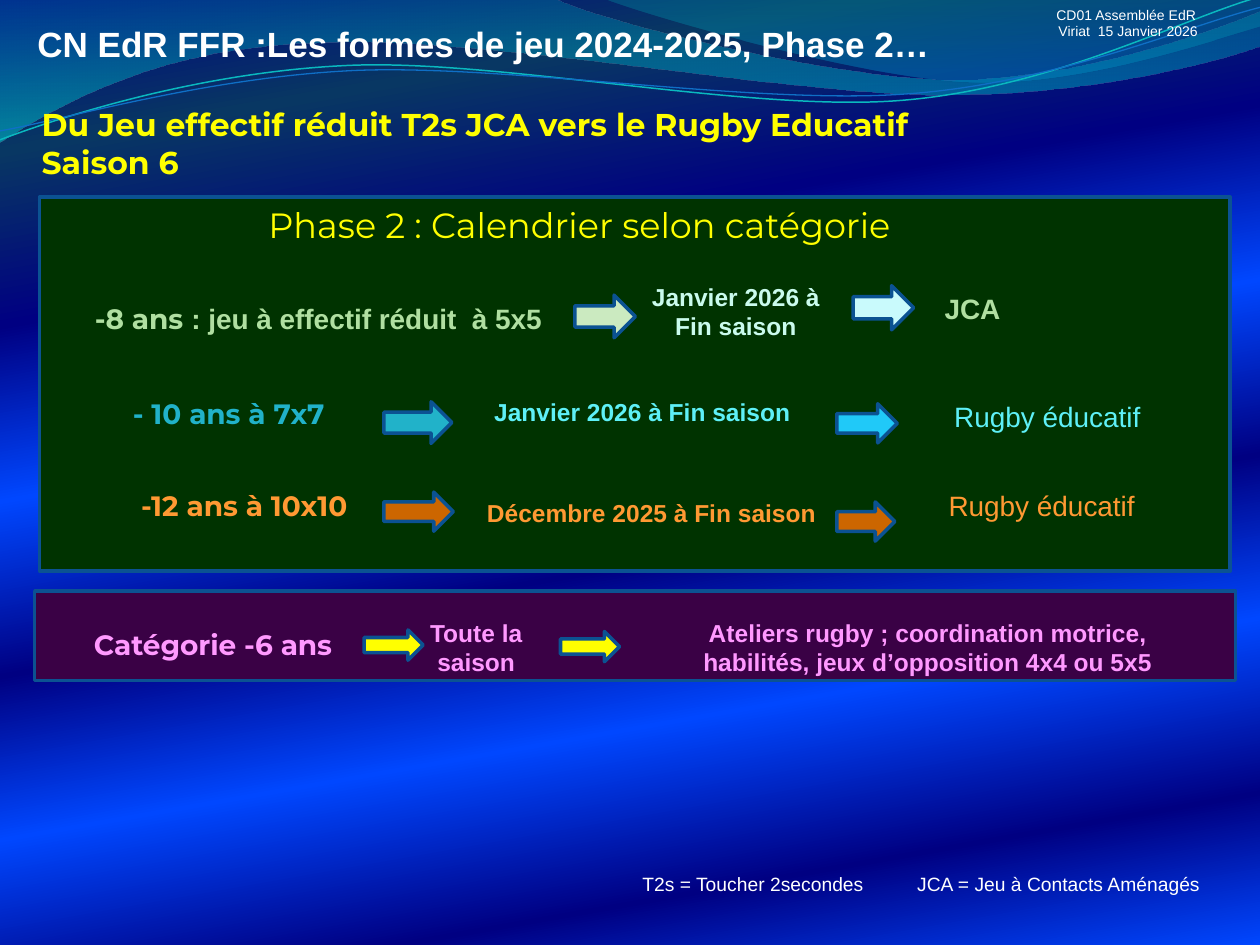
import math

import pptx
import pptx.dml.color
import pptx.enum.shapes
import pptx.enum.text
import pptx.oxml
import pptx.oxml.ns
import pptx.util

Cm = pptx.util.Cm
Pt = pptx.util.Pt
qn = pptx.oxml.ns.qn
NS = pptx.oxml.ns.nsdecls("a")
SHAPE = pptx.enum.shapes.MSO_SHAPE
ALIGN = pptx.enum.text.PP_ALIGN
LEFT, CENTER = ALIGN.LEFT, ALIGN.CENTER

COLORS = {
    "white": "FFFFFF", "yellow": "FFFF00", "border": "0B5292",
    "green panel": "003300", "purple panel": "3A0145", "pink": "FF99FF",
    "sage": "B0DFA1", "pale sage": "CBEAC0", "mint": "CAFBED", "ice": "C9FAFC",
    "teal": "21B2C9", "aqua": "5EF0F7", "sky": "20C9F8",
    "orange": "FF9933", "rust": "CC6600",
    "wave cyan": "0AB8BF", "wave blue": "0F6FC6",
}

# Gradient stops: position, colour, opacity in percent
BACKGROUND = [(0, "000082", 100), (13, "083763", 100), (28, "000082", 100),
              (43, "0047FF", 100), (58, "000082", 100), (72, "0047FF", 100),
              (87, "000082", 100), (100, "0047FF", 100)]

# Waves in cm: the first point, then lines (2 numbers) or Bezier curves (6)
WAVE_BANDS = [
    ([(0, -0.03), (11.18, -0.03), (12.09, 0.43, 16.87, 1.6, 19.25, 1.6),
      (21.67, 1.6, 24.33, 0.66, 25.4, 0.23), (25.43, 0.91),
      (24.97, 1.12, 22.1, 1.93, 18.95, 1.91),
      (15.8, 1.91, 9.7, 0.71, 6.53, 0.86),
      (3.28, 0.89, 1.17, 2.11, -0.03, 2.87)],
     [(0, "0074A1", 45), (100, "00C6CF", 55)]),
    ([(12.17, -0.03), (12.93, 0.28, 17.32, 1.57, 19.53, 1.65),
      (21.74, 1.75, 24.41, 0.81, 25.4, 0.53), (25.4, 0)],
     [(0, "00A1A9", 30), (80, "008BBF", 45)]),
]
WAVE_LINES = [
    ([(0, 2.82), (1.22, 2.36, 4.01, 1.45, 7.04, 1.32),
      (10.03, 1.19, 15.06, 2.26, 18.11, 2.03),
      (21.16, 1.8, 23.83, 0.38, 25.35, -0.05)], "wave cyan", 0.85),
    ([(0, 2.64), (1.19, 2.44, 4.17, 1.55, 7.19, 1.42),
      (10.24, 1.3, 15.16, 2.11, 18.21, 1.9),
      (21.23, 1.7, 23.9, 0.53, 25.4, 0.15)], "wave blue", 0.75),
]
WAVE_TILT = -2.7

# Calendar rows: texts (box, lines, font, size, colour, bold), arrows (box, colour)
ROW_6 = (
    [((1.5, 12.52, 5.59, 0.94), ["Catégorie -6 ans"], "Montserrat", 16, "pink", True),
     ((8.1, 12.33, 3, 1.45), ["Toute la saison"], "Arial", 14, "pink", True),
     ((12.9, 12.33, 11.61, 1.45),
      ["Ateliers rugby ; coordination motrice, habilités, jeux d’opposition 4x4 ou 5x5"],
      "Arial", 14, "pink", True)],
    [((7.34, 12.7, 1.19, 0.61), "yellow"), ((11.3, 12.73, 1.19, 0.61), "yellow")])
ROW_8 = (
    [((1.19, 5.96, 10.62, 0.94), [[("-8 ans ", "Montserrat"),
                                   (": jeu à effectif réduit  à 5x5 ", "Arial")]],
      "Arial", 16, "sage", True),
     ((12.79, 5.56, 4.09, 1.45), ["Janvier 2026 à", "Fin saison"], "Arial", 14, "mint", True),
     ((17.79, 5.75, 3.63, 0.94), ["JCA"], "Arial", 16, "sage", True)],
    [((11.59, 5.95, 1.22, 0.86), "pale sage"), ((17.2, 5.76, 1.22, 0.89), "ice")])
ROW_10 = (
    [((1.02, 7.87, 7.34, 0.94), ["- 10 ans à 7x7 "], "Montserrat", 16, "teal", True),
     ((9.18, 7.87, 7.54, 0.86), ["Janvier 2026 à Fin saison"], "Arial", 14, "aqua", True),
     ((18.46, 7.92, 5.31, 0.94), ["Rugby éducatif"], "Arial", 16, "aqua", False)],
    [((7.74, 8.1, 1.37, 0.84), "teal"), ((16.87, 8.14, 1.22, 0.79), "sky")])
ROW_12 = (
    [((1.4, 9.73, 7.21, 0.94), ["-12 ans à 10x10 "], "Montserrat", 16, "orange", True),
     ((9.53, 9.92, 7.21, 0.86), ["Décembre 2025 à Fin saison"], "Arial", 14, "orange", True),
     ((18.46, 9.73, 5.08, 0.94), ["Rugby éducatif"], "Arial", 16, "orange", False)],
    [((7.74, 9.92, 1.4, 0.79), "rust"), ((16.87, 10.12, 1.17, 0.79), "rust")])


def rgb(name):
    return pptx.dml.color.RGBColor.from_string(COLORS[name])


def set_attrs(obj, values):
    for name, value in values.items():
        setattr(obj, name, value)


def set_gradient(fill, element, stops, angle):
    fill.gradient()
    old = next(element.iter(qn("a:gradFill")))
    gs = "".join(f'<a:gs pos="{pos * 1000}"><a:srgbClr val="{color}">'
                 f'<a:alpha val="{alpha * 1000}"/></a:srgbClr></a:gs>'
                 for pos, color, alpha in stops)
    new = pptx.oxml.parse_xml(
        f'<a:gradFill {NS} rotWithShape="1"><a:gsLst>{gs}</a:gsLst>'
        f'<a:lin ang="{angle * 60000}" scaled="0"/></a:gradFill>')
    old.getparent().replace(old, new)


def turn(x, y, degrees, cx=12.7, cy=1.46):
    cos, sin = math.cos(math.radians(degrees)), math.sin(math.radians(degrees))
    return (cx + (x - cx) * cos - (y - cy) * sin,
            cy + (x - cx) * sin + (y - cy) * cos)


def add_outline(shapes, segments, close, tilt=0):
    points = [turn(*seg[i:i + 2], -tilt) for seg in segments for i in range(0, len(seg), 2)]
    emu = [(Cm(x), Cm(y)) for x, y in points]
    fb = shapes.build_freeform(*emu[0])
    fb.add_line_segments(emu[1:], close=close)
    sp = fb.convert_to_shape()
    set_attrs(sp, {"rotation": tilt})
    sp.shadow.inherit = False

    # Join the three lines of each Bezier segment into one curve
    lines = iter(list(sp._element.iter(qn("a:lnTo"))))
    for seg in segments[1:]:
        parts = [next(lines) for _ in range(len(seg) // 2)]
        if len(parts) == 3:
            curve = pptx.oxml.parse_xml(f"<a:cubicBezTo {NS}/>")
            parts[0].addprevious(curve)
            for part in parts:
                curve.append(part[0])
                part.getparent().remove(part)
    return sp


def add_waves(shapes):
    for segments, stops in WAVE_BANDS:
        sp = add_outline(shapes, segments, True)
        set_gradient(sp.fill, sp._element, stops, 90)
        sp.line.fill.background()
    group = shapes.add_group_shape().shapes
    for segments, color, width in WAVE_LINES:
        sp = add_outline(group, segments, False, WAVE_TILT)
        sp.fill.background()
        sp.line.color.rgb = rgb(color)
        sp.line.width = Pt(width)


def add_block(shapes, kind, box, color):
    sp = shapes.add_shape(kind, *map(Cm, box))
    sp.shadow.inherit = False
    sp.fill.solid()
    sp.fill.fore_color.rgb = rgb(color)
    sp.line.color.rgb = rgb("border")
    sp.line.width = Pt(2)


def write_text(sp, lines, font, size, color, bold=False, align=CENTER):
    tf = sp.text_frame
    set_attrs(tf, {"word_wrap": True, "auto_size": pptx.enum.text.MSO_AUTO_SIZE.NONE,
                   "vertical_anchor": pptx.enum.text.MSO_ANCHOR.TOP})
    for i, line in enumerate(lines):
        p = tf.paragraphs[0] if i == 0 else tf.add_paragraph()
        p.alignment = align
        for text, name in [(line, font)] if isinstance(line, str) else line:
            r = p.add_run()
            r.text = text
            set_attrs(r.font, {"name": name, "size": Pt(size), "bold": bold})
            r.font.color.rgb = rgb(color)
    return tf


def add_text(shapes, box, *args, **kwargs):
    return write_text(shapes.add_textbox(*map(Cm, box)), *args, **kwargs)


def add_row(shapes, row):
    texts, arrows = row
    for box, color in arrows:
        add_block(shapes, SHAPE.RIGHT_ARROW, box, color)
    for text in texts:
        add_text(shapes, *text)


def main():
    prs = pptx.Presentation()
    set_attrs(prs, {"slide_width": Cm(25.4), "slide_height": Cm(19.05)})
    s = prs.slides.add_slide(prs.slide_layouts[5])

    # Background and waves
    set_gradient(s.background.fill, s._element, BACKGROUND, 80)
    add_waves(s.shapes)

    # Category under 6
    group = s.shapes.add_group_shape().shapes
    add_block(group, SHAPE.RECTANGLE, (0.7, 11.92, 24.21, 1.8), "purple panel")
    add_row(group, ROW_6)

    # Title, brought in front of the waves, and subtitle
    title = s.shapes.title
    set_attrs(title, {"left": Cm(0.5), "top": Cm(0.33),
                      "width": Cm(19.81), "height": Cm(1.12)})
    write_text(title, ["CN EdR FFR :Les formes de jeu 2024-2025, Phase 2…"],
               "Arial", 20, "white", True, LEFT)
    title._element.getparent().append(title._element)
    add_text(s.shapes, (0.59, 1.99, 19.99, 2.57),
             ["Du Jeu effectif réduit T2s JCA vers le Rugby Educatif", "Saison 6"],
             "Montserrat", 18, "yellow", True, LEFT)

    # Phase 2 calendar
    add_block(s.shapes, SHAPE.RECTANGLE, (0.8, 3.97, 24, 7.54), "green panel")
    add_text(s.shapes, (5.16, 3.97, 16.66, 1.12), ["Phase 2 : Calendrier selon catégorie"],
             "Montserrat", 20, "yellow", align=LEFT)
    for row in (ROW_10, ROW_8, ROW_12):
        add_row(s.shapes.add_group_shape().shapes, row)

    # Date and abbreviations
    add_text(s.shapes, (20.09, 0, 5.31, 0.94),
             ["CD01 Assemblée EdR ", "Viriat  15 Janvier 2026"], "Arial", 8, "white")
    tf = add_text(s.shapes, (12.7, 17.46, 11.99, 0.74),
                  ["T2s = Toucher 2secondes\tJCA = Jeu à Contacts Aménagés"],
                  "Arial", 11, "white", align=LEFT)
    tf.paragraphs[0]._p.get_or_add_pPr().append(pptx.oxml.parse_xml(
        f'<a:tabLst {NS}><a:tab pos="{Cm(5.54)}" algn="l"/></a:tabLst>'))

    prs.save("out.pptx")


if __name__ == "__main__":
    main()
